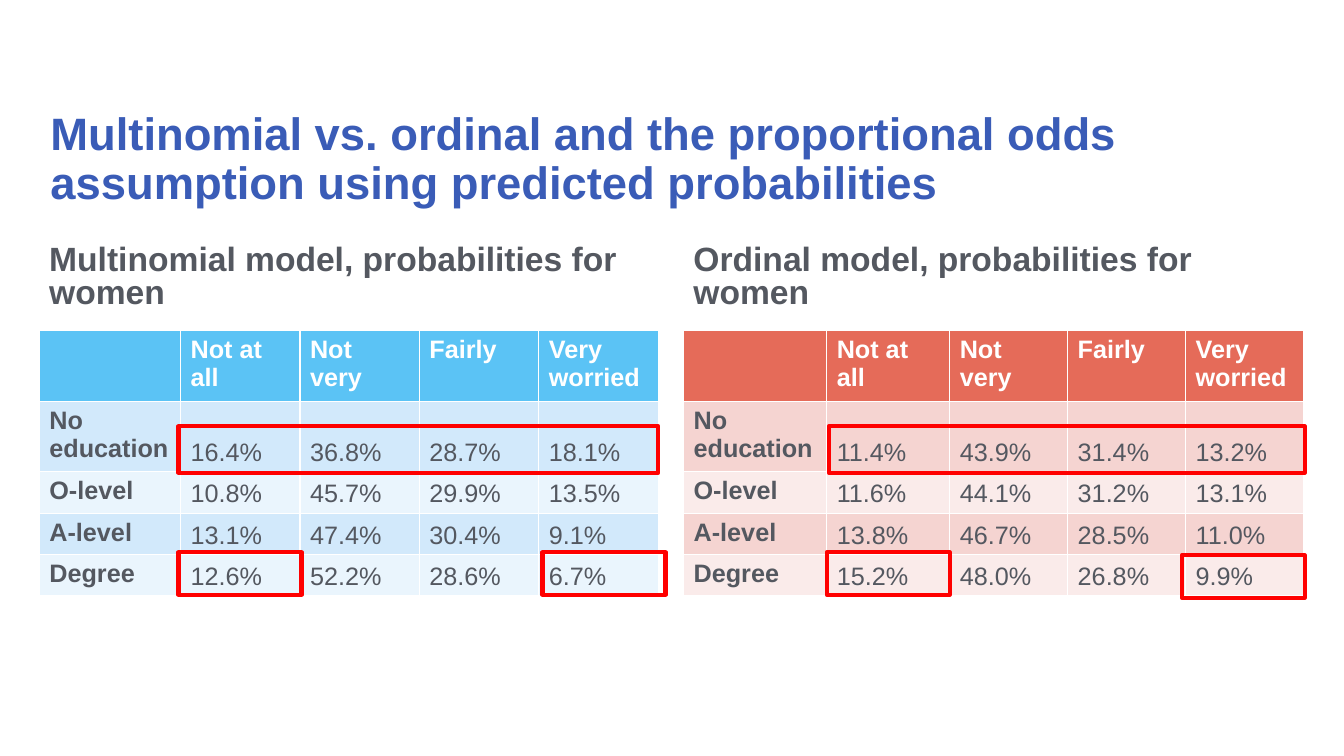
from pptx import Presentation
from pptx.dml.color import RGBColor
from pptx.enum.shapes import MSO_SHAPE
from pptx.enum.text import MSO_ANCHOR, MSO_AUTO_SIZE, PP_ALIGN
from pptx.util import Inches, Pt

COLORS = {
    "title": "3A5CB7", "text": "545860", "white": "FFFFFF", "mark": "FF0000",
    "blue": "5BC3F5", "blue_dark": "D2E9FB", "blue_light": "EAF5FD",
    "red": "E56B59", "red_dark": "F5D4D1", "red_light": "FAEBEA",
}
HEADERS = ["", "Not at all", "Not very", "Fairly", "Very worried"]
LEVELS = ["No education", "O-level", "A-level", "Degree"]
ROW_H = 0.41

# Marks are offsets and sizes (x, y, w, h) from the top left of the table.
MODELS = [
    {
        "heading": "Multinomial model, probabilities for women",
        "hue": "blue", "box": (0.39, 2.38, 6.14),
        "cols": [1.4, 1.185, 1.185, 1.185, 1.185],
        "values": [[16.4, 36.8, 28.7, 18.1], [10.8, 45.7, 29.9, 13.5],
                   [13.1, 47.4, 30.4, 9.1], [12.6, 52.2, 28.6, 6.7]],
        "marks": [(1.38, 0.95, 4.76, 0.46), (1.38, 2.2, 1.22, 0.42),
                  (4.99, 2.2, 1.22, 0.42)],
    },
    {
        "heading": "Ordinal model, probabilities for women",
        "hue": "red", "box": (6.78, 2.38, 6.16),
        "cols": [1.42, 1.22, 1.17, 1.17, 1.17],
        "values": [[11.4, 43.9, 31.4, 13.2], [11.6, 44.1, 31.2, 13.1],
                   [13.8, 46.7, 28.5, 11.0], [15.2, 48.0, 26.8, 9.9]],
        "marks": [(1.44, 0.95, 4.72, 0.46), (1.42, 2.2, 1.22, 0.42),
                  (4.94, 2.23, 1.22, 0.42)],
    },
]


def rgb(name):
    return RGBColor.from_string(COLORS[name])


def set_text(tf, text, size, color, bold=True, spacing=None):
    tf.text = text
    p = tf.paragraphs[0]
    p.alignment = PP_ALIGN.LEFT
    if spacing:
        p.line_spacing = spacing
    for r in p.runs:
        r.font.name = "Arial"
        r.font.size = Pt(size)
        r.font.bold = bold
        r.font.color.rgb = rgb(color)


def add_title(s, x, y, w, h):
    title = s.shapes.title
    title.left, title.top, title.width, title.height = map(Inches, (x, y, w, h))
    tf = title.text_frame
    tf.word_wrap = True
    tf.auto_size = MSO_AUTO_SIZE.NONE
    tf.vertical_anchor = MSO_ANCHOR.MIDDLE
    set_text(tf, "Multinomial vs. ordinal and the proportional odds "
             "assumption using predicted probabilities", 32.4, "title", spacing=0.9)


def add_heading(s, text, x, y, w, h):
    tf = s.shapes.add_textbox(*map(Inches, (x, y, w, h))).text_frame
    tf.word_wrap = True
    tf.vertical_anchor = MSO_ANCHOR.BOTTOM
    set_text(tf, text, 24, "text", spacing=0.8)


def add_probabilities(s, model, x, y, w):
    rows = [HEADERS] + [[level] + [f"{v:.1f}%" for v in values]
                        for level, values in zip(LEVELS, model["values"])]
    table = s.shapes.add_table(len(rows), len(HEADERS), Inches(x), Inches(y),
                               Inches(w), Inches(ROW_H * len(rows))).table
    for col, width in zip(table.columns, model["cols"]):
        col.width = Inches(width)
    hue = model["hue"]
    for i, row in enumerate(rows):
        fill = hue if i == 0 else hue + ("_dark" if i % 2 else "_light")
        for j, text in enumerate(row):
            cell = table.cell(i, j)
            cell.fill.solid()
            cell.fill.fore_color.rgb = rgb(fill)
            is_value = i > 0 and j > 0
            if is_value:
                cell.vertical_anchor = MSO_ANCHOR.BOTTOM
            set_text(cell.text_frame, text, 18, "text" if i else "white",
                     bold=not is_value)


def add_mark(s, x, y, w, h):
    sp = s.shapes.add_shape(MSO_SHAPE.RECTANGLE, *map(Inches, (x, y, w, h)))
    sp.shadow.inherit = False
    sp.fill.background()
    sp.line.color.rgb = rgb("mark")
    sp.line.width = Pt(3)


def add_model(s, model, x, y, w):
    """Place a heading, its table and the red marks over the table."""
    add_heading(s, model["heading"], x, y, w, 0.75)
    table_y = y + 0.9
    add_probabilities(s, model, x, table_y, w)
    for dx, dy, mark_w, mark_h in model["marks"]:
        add_mark(s, x + dx, table_y + dy, mark_w, mark_h)


def main():
    prs = Presentation()
    prs.slide_width, prs.slide_height = Inches(13.33), Inches(7.5)
    s = prs.slides.add_slide(prs.slide_layouts[5])
    add_title(s, 0.4, 1.06, 12.54, 1.06)
    for model in MODELS:
        add_model(s, model, *model["box"])
    prs.save("out.pptx")


if __name__ == "__main__":
    main()
